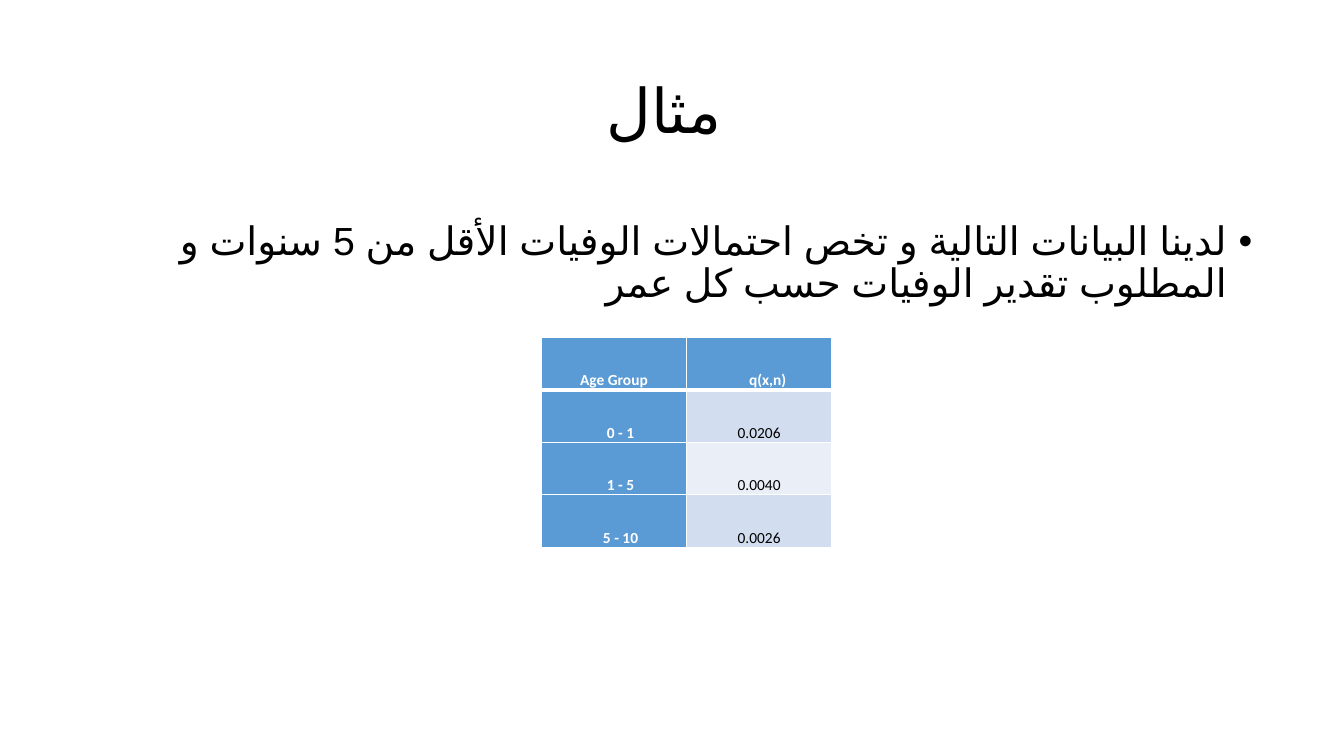
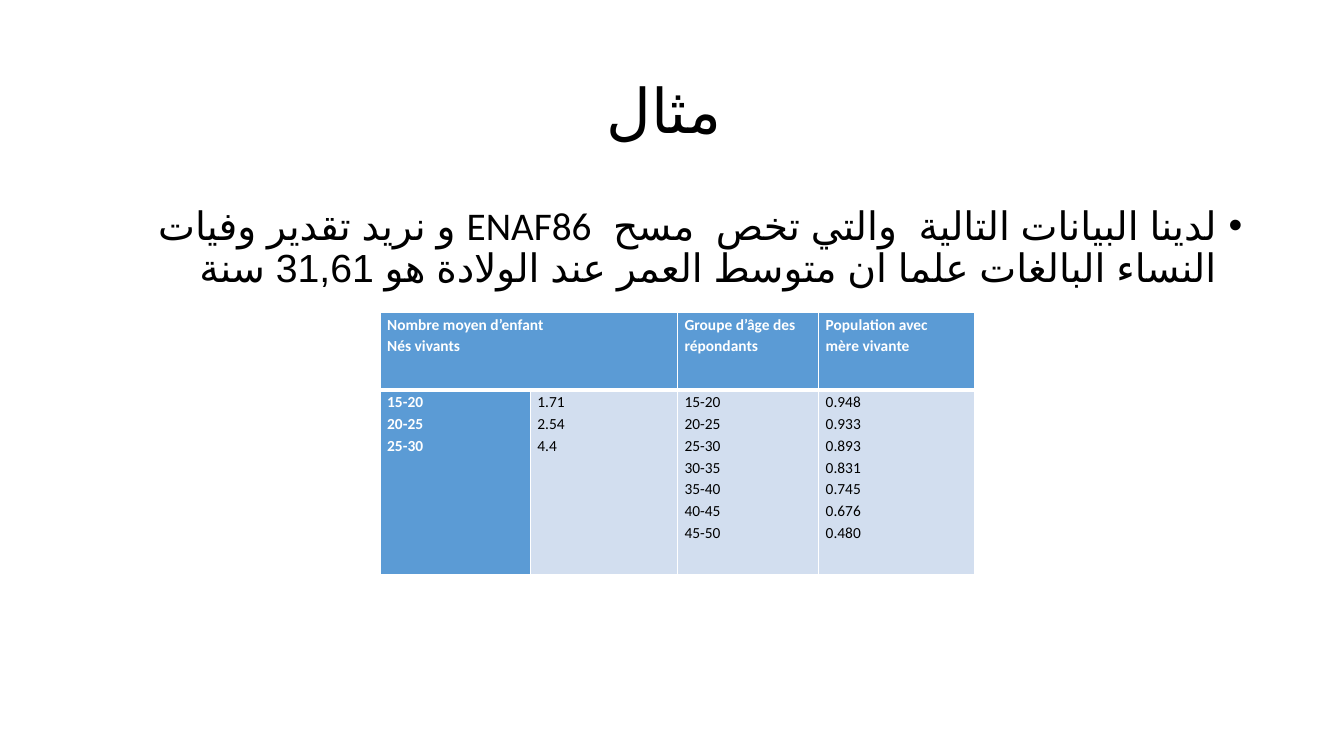
from lxml.etree import SubElement
from pptx import Presentation
from pptx.dml.color import RGBColor
from pptx.enum.lang import MSO_LANGUAGE_ID
from pptx.enum.text import MSO_ANCHOR, MSO_AUTO_SIZE, PP_ALIGN
from pptx.oxml.ns import qn
from pptx.util import Inches, Pt

BLACK = "000000"
WHITE = "FFFFFF"
BLUE = "5B9BD5"
BANDS = ("D2DEEF", "EAEFF7")


def color(value):
    return RGBColor.from_string(value)


def write_text(frame, text, size=11, ink=BLACK, bold=False, align=PP_ALIGN.LEFT,
               spacing=1.15, before=0, anchor=MSO_ANCHOR.TOP, font="Calibri",
               arabic=False):
    frame.word_wrap = True
    frame.vertical_anchor = anchor
    for index, line in enumerate(text.split("\n")):
        paragraph = frame.add_paragraph() if index else frame.paragraphs[0]
        paragraph.alignment = align
        paragraph.line_spacing = spacing
        paragraph.space_before = Pt(before)
        run = paragraph.add_run()
        run.text = line
        run.font.name = font
        run.font.size = Pt(size)
        run.font.bold = bold
        run.font.color.rgb = color(ink)
        if arabic:
            run.font.language_id = MSO_LANGUAGE_ID.ARABIC_ALGERIA
            SubElement(run._r.get_or_add_rPr(), qn("a:cs"), typeface="Arial")


def set_bullet(paragraph, indent):
    properties = paragraph._p.get_or_add_pPr()
    properties.set("marL", str(Inches(indent)))
    properties.set("indent", str(-Inches(indent)))
    properties.set("rtl", "1")
    SubElement(properties, qn("a:buFont"), typeface="Arial")
    SubElement(properties, qn("a:buChar"), char="•")


def set_borders(cell, widths):
    properties = cell._tc.get_or_add_tcPr()
    for side, width in zip("LRTB", widths):
        line = SubElement(properties, qn(f"a:ln{side}"), w=str(Pt(width)))
        fill = SubElement(line, qn("a:solidFill"))
        SubElement(fill, qn("a:srgbClr"), val=WHITE)


class Deck:
    def __init__(self):
        self.presentation = Presentation()
        self.presentation.slide_width = Inches(13.33)
        self.presentation.slide_height = Inches(7.5)
        self.slide = None

    def add_slide(self, title):
        layout = self.presentation.slide_layouts[1]
        self.slide = self.presentation.slides.add_slide(layout)
        frame = self.place(self.slide.shapes.title, 0.92, 0.4, 11.5, 1.45)
        write_text(frame, title, size=44, align=PP_ALIGN.CENTER, spacing=0.9,
                   anchor=MSO_ANCHOR.MIDDLE, arabic=True)

    def place(self, shape, left, top, width, height):
        shape.left, shape.top = Inches(left), Inches(top)
        shape.width, shape.height = Inches(width), Inches(height)
        shape.text_frame.auto_size = MSO_AUTO_SIZE.NONE
        return shape.text_frame

    def add_body(self, text, left, top):
        frame = self.place(self.slide.placeholders[1], left, top, 11.5, 4.76)
        write_text(frame, text, size=28, align=PP_ALIGN.RIGHT, spacing=0.9, before=10,
                   arabic=True)
        set_bullet(frame.paragraphs[0], 0.25)

    def add_table(self, rows, left, top, widths, heights, inset, **text_format):
        table = self.slide.shapes.add_table(
            len(rows), len(widths), Inches(left), Inches(top),
            Inches(sum(widths)), Inches(sum(heights))).table
        table.horz_banding = False
        for column, width in zip(table.columns, widths):
            column.width = Inches(width)
        for row, height in zip(table.rows, heights):
            row.height = Inches(height)
        for row_index, row in enumerate(rows):
            for column_index, text in enumerate(row):
                cell = table.cell(row_index, column_index)
                header = row_index == 0 or column_index == 0
                set_borders(cell, (1, 1, 1, 1 if row_index else 3))
                cell.fill.solid()
                cell.fill.fore_color.rgb = color(
                    BLUE if header else BANDS[(row_index - 1) % 2])
                cell.margin_left = cell.margin_right = Inches(inset)
                cell.margin_top = cell.margin_bottom = 0
                if text:
                    write_text(cell.text_frame, text, bold=header,
                               ink=WHITE if header else BLACK, **text_format)
                cell.vertical_anchor = text_format.get("anchor", MSO_ANCHOR.TOP)
        return table


def build_probability_slide(deck):
    deck.add_slide("مثال ")
    deck.add_body("لدينا البيانات التالية و تخص احتمالات الوفيات الأقل من 5 سنوات و "
                  "المطلوب تقدير الوفيات حسب كل عمر", 1.02, 2.15)
    rows = [("Age Group", "q(x,n)"), ("0 - 1", "0.0206"),
            ("1 - 5", "0.0040"), ("5 - 10", "0.0026")]
    table = deck.add_table(rows, 5.37, 3.35, [1.44] * 2, [0.52] * 4, 0.05,
                           align=PP_ALIGN.CENTER, anchor=MSO_ANCHOR.BOTTOM)
    table.cell(0, 1).margin_left = Inches(0.22)
    for row_index in range(1, len(rows)):
        table.cell(row_index, 0).margin_left = Inches(0.18)


def build_survey_slide(deck):
    deck.add_slide("مثال ")
    deck.add_body("لدينا البيانات التالية  والتي تخص  مسح  ENAF86 و نريد تقدير وفيات "
                  "النساء البالغات علما ان متوسط العمر عند الولادة هو 31,61 سنة", 0.92, 2)
    ages = [f"{start}-{start + 5}" for start in range(15, 50, 5)]
    rows = [
        ("Nombre moyen d’enfant\nNés vivants", "",
         "Groupe d’âge des répondants", "Population avec mère vivante"),
        ("\n".join(ages[:3]), "1.71\n2.54\n4.4", "\n".join(ages),
         "0.948\n0.933\n0.893\n0.831\n0.745\n0.676\n0.480"),
    ]
    table = deck.add_table(rows, 3.77, 3.1, [1.49, 1.46, 1.4, 1.55], [0.77, 1.83], 0.07)
    table.cell(0, 0).merge(table.cell(0, 1))
    table.cell(0, 3).margin_right = Inches(0.3)


def main():
    deck = Deck()
    build_probability_slide(deck)
    build_survey_slide(deck)
    deck.presentation.save("out.pptx")


if __name__ == "__main__":
    main()
